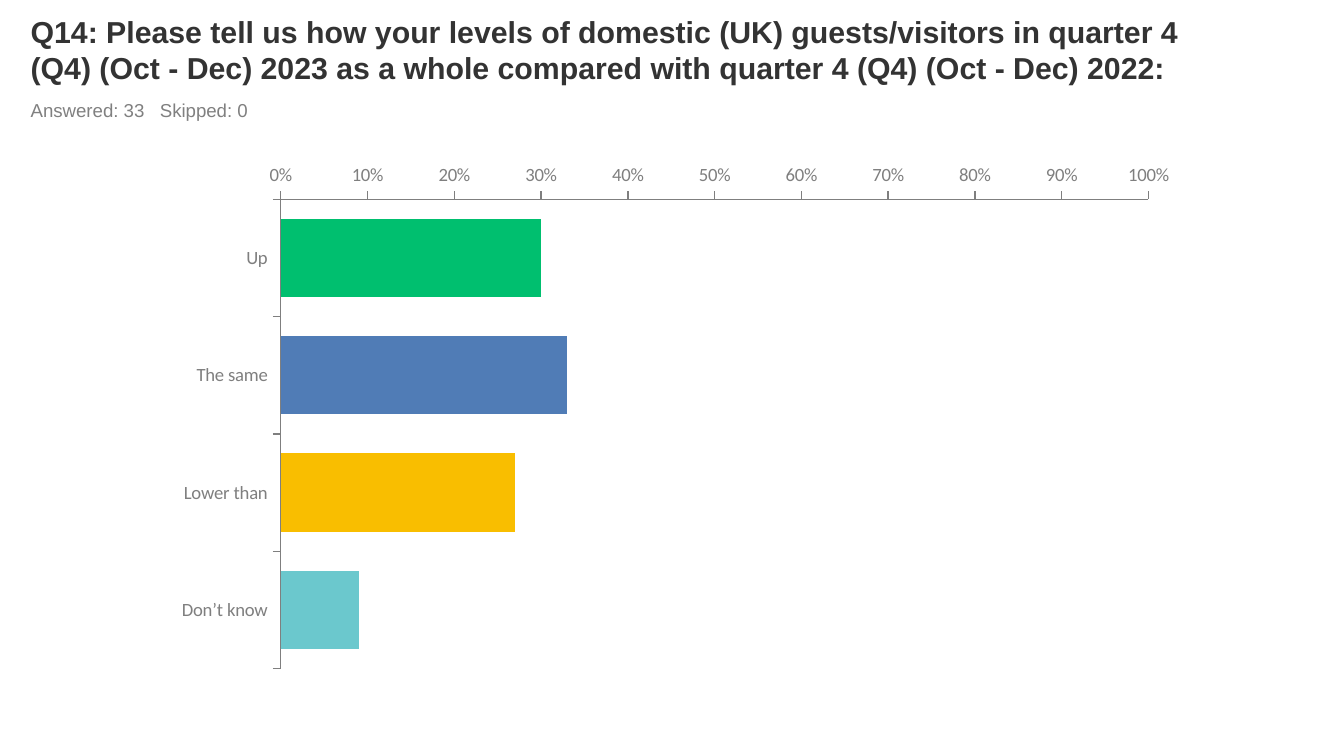
import pptx
import pptx.chart.data
import pptx.dml.color
import pptx.enum.chart
import pptx.enum.text
import pptx.util
from pptx.util import Cm

GREY = "7F7F7F"
ANSWERS = [
    ("Up", 0.3, "00BF6F"),
    ("The same", 0.33, "507CB6"),
    ("Lower than", 0.27, "F9BE00"),
    ("Don’t know", 0.09, "6BC8CD"),
]


def colour(hex_string):
    return pptx.dml.color.RGBColor.from_string(hex_string)


def set_values(target, values):
    for name, value in values.items():
        setattr(target, name, value)


def style_font(font, size, hex_string, name, bold=False):
    set_values(font, {"size": pptx.util.Pt(size), "name": name, "bold": bold})
    font.color.rgb = colour(hex_string)


def add_text(page, area, text, size, hex_string, bold, anchor):
    box = page.shapes.add_textbox(*area)
    set_values(box.text_frame, {"word_wrap": True, "vertical_anchor": anchor})
    span = box.text_frame.paragraphs[0].add_run()
    span.text = text
    style_font(span.font, size, hex_string, "Arial", bold)


def style_axis(axis, values):
    set_values(axis, values)
    set_values(axis, {
        "has_major_gridlines": False,
        "major_tick_mark": pptx.enum.chart.XL_TICK_MARK.OUTSIDE,
        "minor_tick_mark": pptx.enum.chart.XL_TICK_MARK.NONE,
    })
    style_font(axis.tick_labels.font, 10, GREY, "Calibri")
    axis.format.line.width = pptx.util.Pt(0.75)
    axis.format.line.color.rgb = colour(GREY)


def add_answer_chart(page, area):
    data = pptx.chart.data.CategoryChartData(number_format="0%")
    data.categories = [label for label, share, fill in ANSWERS]
    data.add_series("Series 1", [share for label, share, fill in ANSWERS])
    chart = page.shapes.add_chart(
        pptx.enum.chart.XL_CHART_TYPE.BAR_CLUSTERED, *area, data).chart
    set_values(chart, {"has_legend": False, "has_title": False})
    style_font(chart.font, 18, "333333", "Calibri")

    plot = chart.plots[0]
    set_values(plot, {"gap_width": 50, "overlap": 100, "vary_by_categories": False})
    for index, (label, share, fill) in enumerate(ANSWERS):
        bar = plot.series[0].points[index].format.fill
        bar.solid()
        bar.fore_color.rgb = colour(fill)

    style_axis(chart.category_axis, {
        "reverse_order": True,
        "tick_label_position": pptx.enum.chart.XL_TICK_LABEL_POSITION.LOW,
        "crosses": pptx.enum.chart.XL_AXIS_CROSSES.MAXIMUM,
    })
    style_axis(chart.value_axis, {
        "minimum_scale": 0, "maximum_scale": 1, "major_unit": 0.1})
    set_values(chart.value_axis.tick_labels, {
        "number_format": "0%", "number_format_is_linked": False})


def main():
    deck = pptx.Presentation()
    set_values(deck, {"slide_width": Cm(25.4), "slide_height": Cm(14.28)})
    page = deck.slides.add_slide(deck.slide_layouts[6])
    add_text(page, (Cm(0.33), Cm(0.23), Cm(22.86), Cm(1.52)),
             "Q14: Please tell us how your levels of domestic (UK) guests/visitors "
             "in quarter 4 (Q4) (Oct - Dec) 2023 as a whole compared with "
             "quarter 4 (Q4) (Oct - Dec) 2022:",
             16.2, "333333", True, pptx.enum.text.MSO_ANCHOR.BOTTOM)
    add_text(page, (Cm(0.33), Cm(1.75), Cm(22.86), Cm(0.66)),
             "Answered: 33   Skipped: 0",
             10, "808080", False, pptx.enum.text.MSO_ANCHOR.TOP)
    add_answer_chart(page, (Cm(3.05), Cm(2.92), Cm(19.43), Cm(9.91)))
    deck.save("out.pptx")


if __name__ == "__main__":
    main()
